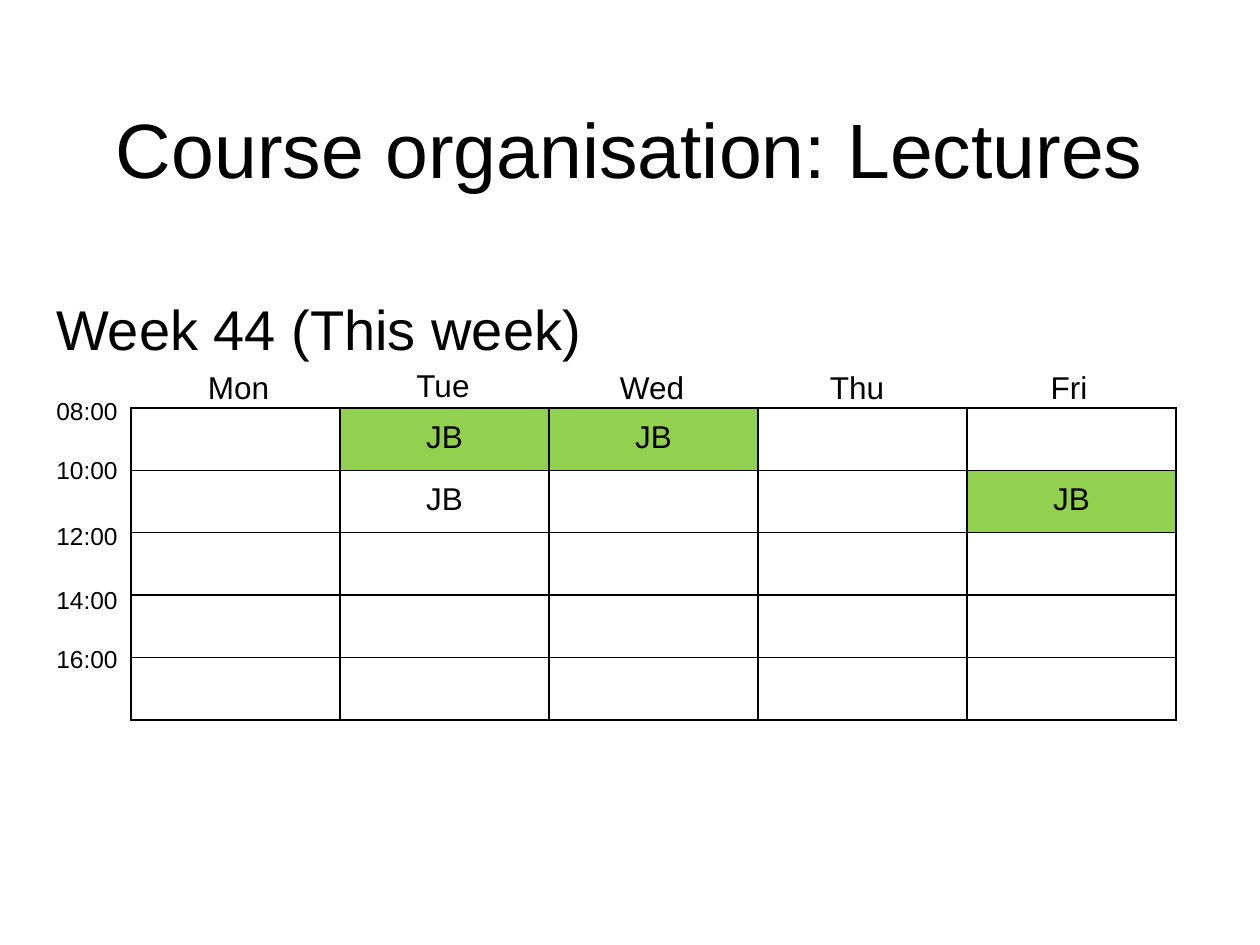
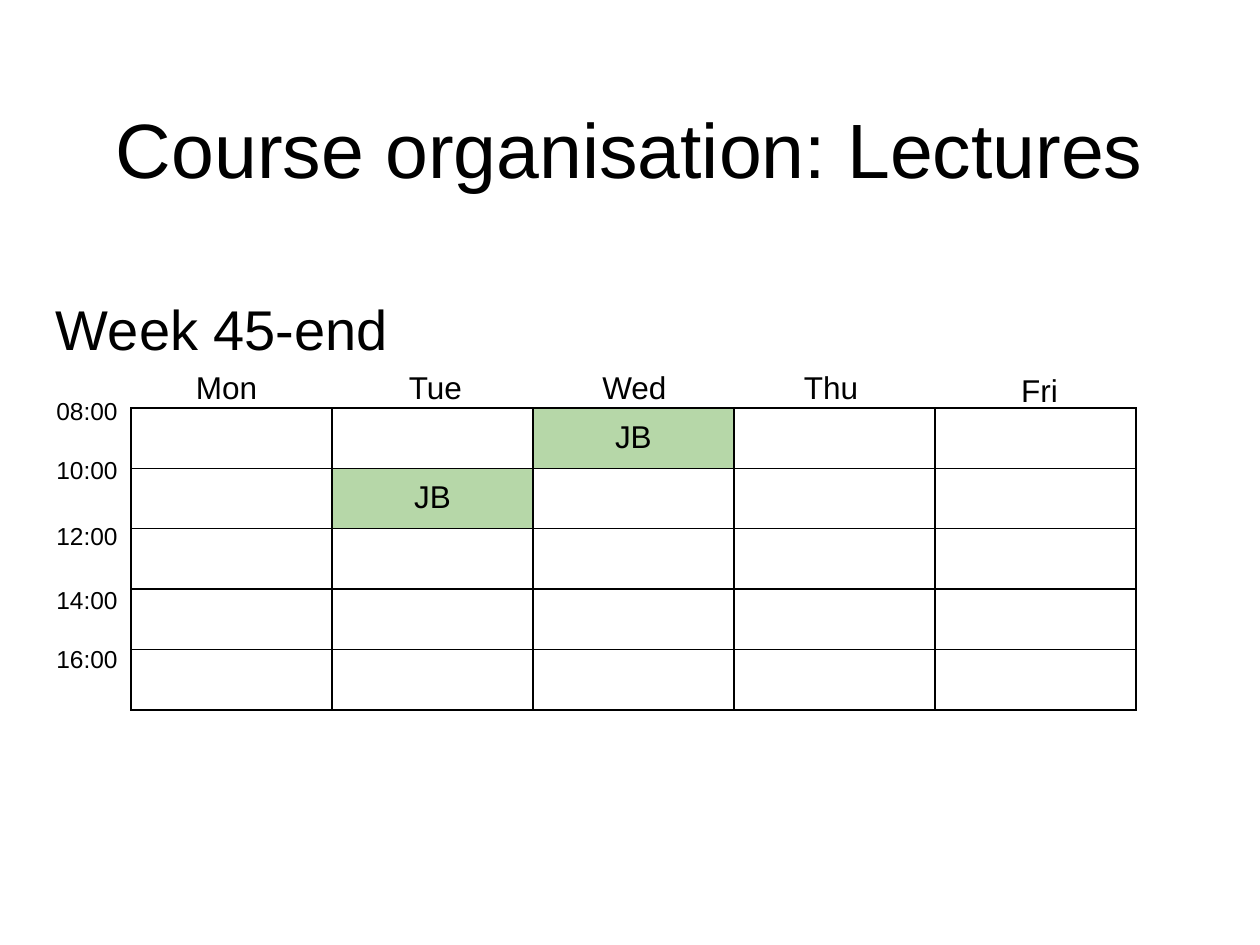
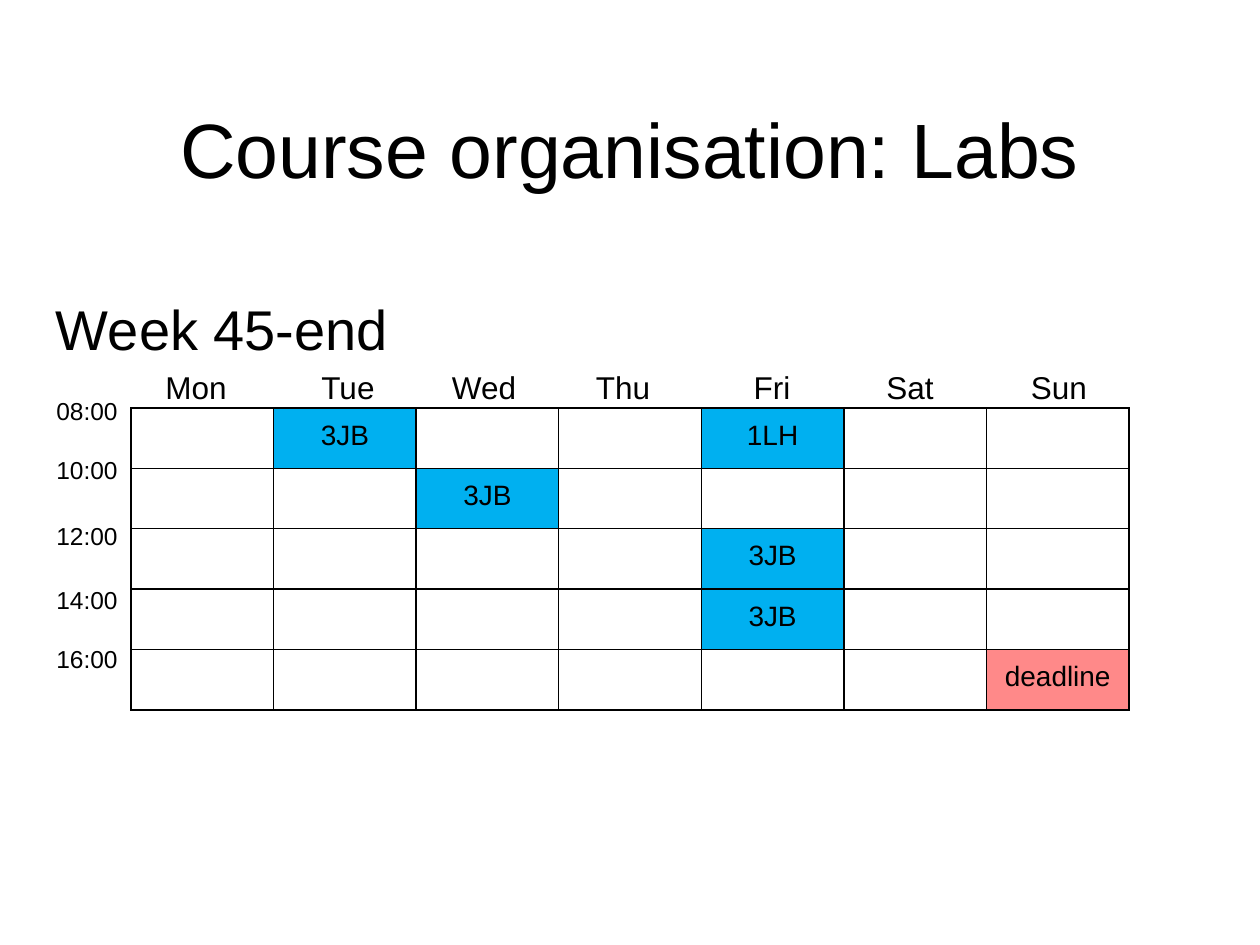
from lxml.etree import SubElement
from pptx import Presentation
from pptx.dml.color import RGBColor as RGB
from pptx.enum.text import MSO_ANCHOR as Anchor, PP_ALIGN as Align
from pptx.oxml.ns import qn
from pptx.util import Pt

COLORS = {"ink": "000000", "lime": "92D050", "sage": "B6D7A8",
          "blue": "00B0F0", "coral": "FF8989"}
FONT = "Arial"
EMU_PER_PX = 914400 / 126
INSET = 13
LABEL_HEIGHT = 54
TABLE_LEFT, TABLE_TOP, ROW_COUNT = 131, 408, 5
TIMES = [("08:00", 383), ("10:00", 442), ("12:00", 508),
         ("14:00", 572), ("16:00", 631)]

SCHEDULES = [
    {"title": "Course organisation: Lectures", "week": "Week 44 (This week)",
     "week_width": 835, "table": (1045, 312), "size": 18,
     "days": [("Mon", 49, 355, 379), ("Tue", 212, 353, 462),
              ("Wed", 421, 355, 462), ("Thu", 626, 355, 462),
              ("Fri", 838, 355, 462)],
     "sessions": {(0, 1): ("JB", "lime"), (0, 2): ("JB", "lime"),
                  (1, 1): ("JB", None), (1, 4): ("JB", "lime")}},
    {"title": "Course organisation: Lectures", "week": "Week 45-end",
     "week_width": 1174, "table": (1005, 302), "size": 18,
     "days": [("Mon", 25, 355, 403), ("Tue", 292, 355, 287),
              ("Wed", 554, 355, 161), ("Thu", 788, 355, 86),
              ("Fri", 1004, 358, 71)],
     "sessions": {(0, 2): ("JB", "sage"), (1, 1): ("JB", "sage")}},
    {"title": "Course organisation: Labs", "week": "Week 45-end",
     "week_width": 1174, "table": (998, 302), "size": 16,
     "days": [("Mon", -35, 355, 462), ("Tue", 117, 355, 462),
              ("Wed", 253, 355, 462), ("Thu", 392, 355, 462),
              ("Fri", 541, 355, 462), ("Sat", 679, 355, 462),
              ("Sun", 828, 355, 462)],
     "sessions": {(0, 1): ("3JB", "blue"), (0, 4): ("1LH", "blue"),
                  (1, 2): ("3JB", "blue"), (2, 4): ("3JB", "blue"),
                  (3, 4): ("3JB", "blue"), (4, 6): ("deadline", "coral")}},
]


def px(length):
    return round(length * EMU_PER_PX)


def write(para, text, size, align):
    para.text = text
    para.alignment = align
    para.font.name = FONT
    para.font.size = Pt(size)
    para.font.color.rgb = RGB.from_string(COLORS["ink"])


def add_text(page, text, place, size, align=Align.CENTER, top_inset=INSET, wrap=False):
    box = page.shapes.add_textbox(*map(px, place))
    frame = box.text_frame
    frame.word_wrap = wrap
    frame.vertical_anchor = Anchor.TOP
    frame.margin_left = frame.margin_right = px(INSET)
    frame.margin_top, frame.margin_bottom = px(top_inset), 0
    write(frame.paragraphs[0], text, size, align)


def add_borders(cell):
    properties = cell._tc.get_or_add_tcPr()
    for side in ("lnL", "lnR", "lnT", "lnB"):
        line = SubElement(properties, qn(f"a:{side}"), w=str(Pt(1)))
        fill = SubElement(line, qn("a:solidFill"))
        SubElement(fill, qn("a:srgbClr"), val=COLORS["ink"])


def add_timetable(page, schedule):
    width, height = schedule["table"]
    column_count = len(schedule["days"])
    table = page.shapes.add_table(ROW_COUNT, column_count, px(TABLE_LEFT),
                                  px(TABLE_TOP), px(width), px(height)).table
    table.first_row = table.horz_banding = False
    for row in range(ROW_COUNT):
        for column in range(column_count):
            cell = table.cell(row, column)
            text, color = schedule["sessions"].get((row, column), ("", None))
            cell.margin_left = cell.margin_right = px(12)
            cell.margin_top, cell.margin_bottom = px(12), px(6)
            add_borders(cell)
            if color:
                cell.fill.solid()
                cell.fill.fore_color.rgb = RGB.from_string(COLORS[color])
            else:
                cell.fill.background()
            write(cell.text_frame.paragraphs[0], text, schedule["size"], Align.CENTER)


def add_schedule(deck, schedule):
    page = deck.slides.add_slide(deck.slide_layouts[6])
    add_text(page, schedule["week"], (43, 277, schedule["week_width"], 471), 32,
             Align.LEFT, top_inset=17, wrap=True)
    add_timetable(page, schedule)
    for day, left, top, width in schedule["days"]:
        add_text(page, day, (left, top, width, LABEL_HEIGHT), 18)
    for time, top in TIMES:
        add_text(page, time, (43, top, 88, LABEL_HEIGHT), 14)
    add_text(page, schedule["title"], (43, 82, 1174, 106), 44, top_inset=20, wrap=True)


def main():
    deck = Presentation()
    deck.slide_width, deck.slide_height = px(1260), px(945)
    for schedule in SCHEDULES:
        add_schedule(deck, schedule)
    deck.save("out.pptx")


if __name__ == "__main__":
    main()
